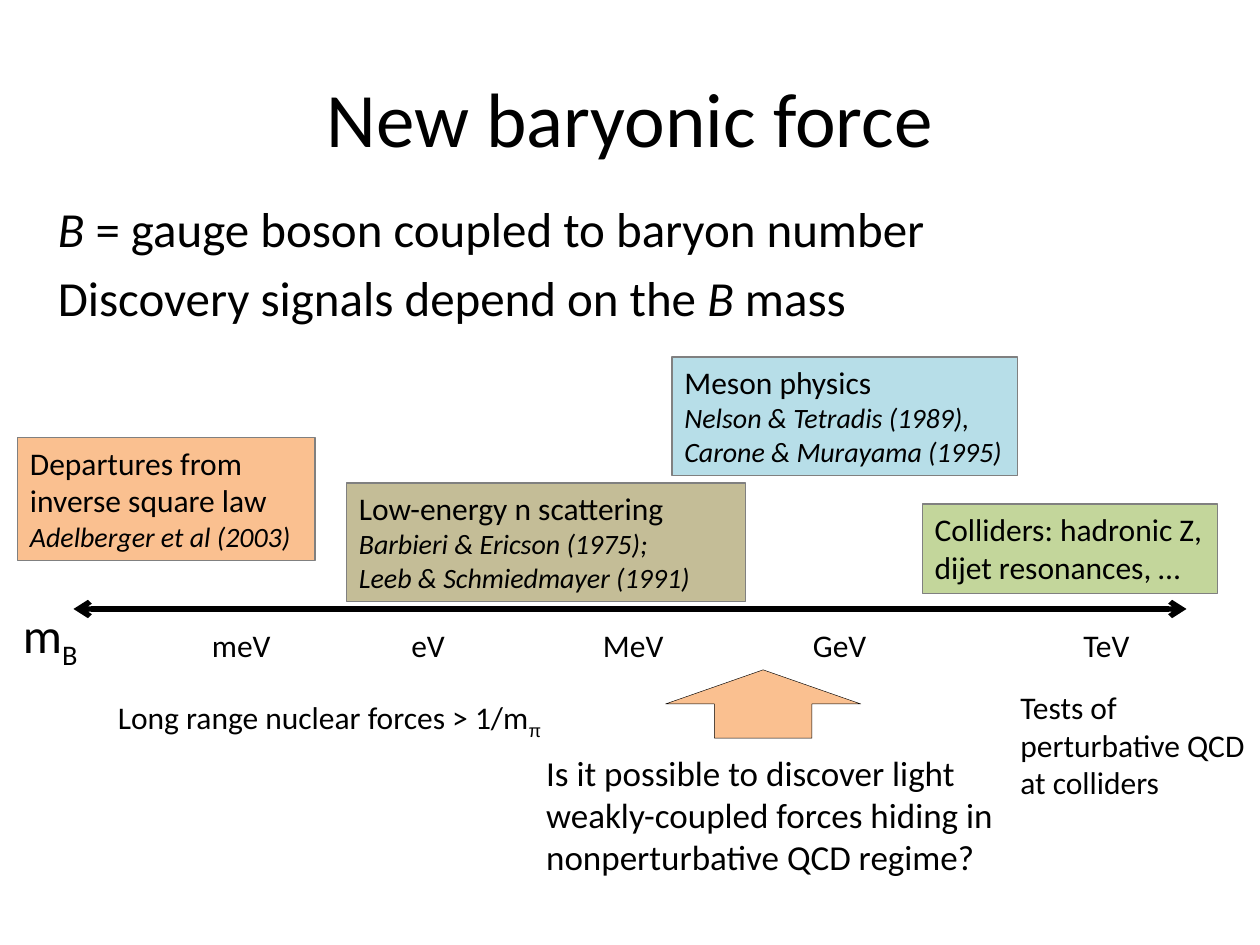
from dataclasses import dataclass

from pptx import Presentation
from pptx.dml.color import RGBColor
from pptx.enum.shapes import MSO_CONNECTOR, MSO_SHAPE
from pptx.enum.text import MSO_ANCHOR, PP_ALIGN
from pptx.oxml.ns import qn
from pptx.util import Pt
from lxml.etree import SubElement


@dataclass(frozen=True)
class Theme:
    font: str = "Calibri"
    symbol_font: str = "Arial"
    ink: str = "000000"
    border: str = "808080"
    orange: str = "FAC090"
    blue: str = "B7DEE8"
    green: str = "C3D69B"
    tan: str = "C4BD97"
    title: int = 44
    body: int = 28
    question: int = 20
    label: int = 18
    citation: int = 16


theme = Theme()


def write(shape, paragraphs, size, align=PP_ALIGN.LEFT, space_before=0):
    """Each paragraph is a list of (text, style) runs; style is '', 'italic', 'cite' or 'sub'."""
    frame = shape.text_frame
    frame.word_wrap = True
    for index, runs in enumerate(paragraphs):
        para = frame.paragraphs[0] if index == 0 else frame.add_paragraph()
        para.alignment = align
        para.space_before = Pt(space_before)
        for text, style in runs:
            for number, line in enumerate(text.split("\n")):
                if number:
                    para.add_line_break()
                span = para.add_run()
                span.text = line
                span.font.name = theme.symbol_font if text == "π" else theme.font
                span.font.size = Pt(theme.citation if style == "cite" else size)
                span.font.italic = style in ("italic", "cite")
                span.font.color.rgb = RGBColor.from_string(theme.ink)
                if style == "sub":
                    span.font._element.set("baseline", "-25000")


def add_block(kind, bounds, fill, border, weight):
    block = page.shapes.add_shape(kind, *map(Pt, bounds))
    block.shadow.inherit = False
    block.fill.solid()
    block.fill.fore_color.rgb = RGBColor.from_string(fill)
    block.line.color.rgb = RGBColor.from_string(border)
    block.line.width = Pt(weight)
    return block


deck = Presentation()
deck.slide_width, deck.slide_height = Pt(720), Pt(540)
page = deck.slides.add_slide(deck.slide_layouts[6])

# Title
title = page.shapes.add_textbox(Pt(36), Pt(21.6), Pt(648), Pt(90))
title.text_frame.vertical_anchor = MSO_ANCHOR.MIDDLE
write(title, [[("New baryonic force", "")]], theme.title, PP_ALIGN.CENTER)

# Introduction
intro = page.shapes.add_textbox(Pt(26), Pt(110), Pt(648), Pt(100))
write(intro, [
    [("B", "italic"), (" = gauge boson coupled to baryon number", "")],
    [("Discovery signals depend on the ", ""), ("B", "italic"), (" mass", "")],
], theme.body, space_before=5.6)

# Mass axis with an arrowhead at both ends
axis = page.shapes.add_connector(MSO_CONNECTOR.STRAIGHT, Pt(678), Pt(348), Pt(42), Pt(348))
axis.line.color.rgb = RGBColor.from_string(theme.ink)
axis.line.width = Pt(3)
axis_line = axis.line._get_or_add_ln()
for end in ("a:headEnd", "a:tailEnd"):
    SubElement(axis_line, qn(end), type="arrow")
SubElement(axis._element.spPr, qn("a:effectLst"))

axis_name = page.shapes.add_textbox(Pt(6), Pt(342), Pt(57), Pt(41))
write(axis_name, [[("m", ""), ("B", "sub")]], theme.body)

# Energy scales along the axis
for unit, left, width in [("meV", 114, 60), ("eV", 228, 36), ("MeV", 337.5, 53),
                          ("GeV", 457.5, 53), ("TeV", 612, 53)]:
    scale = page.shapes.add_textbox(Pt(left), Pt(354.3), Pt(width), Pt(29))
    write(scale, [[(unit, "")]], theme.label)

# Experimental constraints above the axis
constraints = [
    ((10, 250, 170, 70.3), theme.orange, "Departures from inverse square law",
     "Adelberger et al (2003)"),
    ((384, 204, 197.5, 67.7), theme.blue, "Meson physics",
     "Nelson & Tetradis (1989), Carone & Murayama (1995)"),
    ((527, 288, 168.7, 51), theme.green, "Colliders: hadronic Z, dijet resonances, …", ""),
    ((198, 276, 228, 67.7), theme.tan, "Low-energy n scattering",
     "Barbieri & Ericson (1975);\nLeeb & Schmiedmayer (1991)"),
]
for bounds, fill, heading, citation in constraints:
    box = add_block(MSO_SHAPE.RECTANGLE, bounds, fill, theme.border, 0.75)
    box.text_frame.vertical_anchor = MSO_ANCHOR.TOP
    paragraphs = [[(heading, "")]]
    if citation:
        paragraphs.append([(citation, "cite")])
    write(box, paragraphs, theme.label)

# Open question and the arrow pointing to its mass range
question = page.shapes.add_textbox(Pt(305), Pt(426), Pt(271), Pt(100))
write(question, [[("Is it possible to discover light weakly-coupled forces "
                   "hiding in nonperturbative QCD regime?", "")]],
      theme.question, space_before=4)
add_block(MSO_SHAPE.UP_ARROW, (380.3, 382.8, 111.6, 39), theme.orange, theme.ink, 0.25)

# Remarks below the axis
nuclear = page.shapes.add_textbox(Pt(60.3), Pt(395.5), Pt(297), Pt(29))
write(nuclear, [[("Long range nuclear forces > 1/m", ""), ("π", "sub")]], theme.label)
collider = page.shapes.add_textbox(Pt(576), Pt(389.5), Pt(156), Pt(73))
write(collider, [[("Tests of perturbative QCD at colliders", "")]], theme.label)

deck.save("out.pptx")
